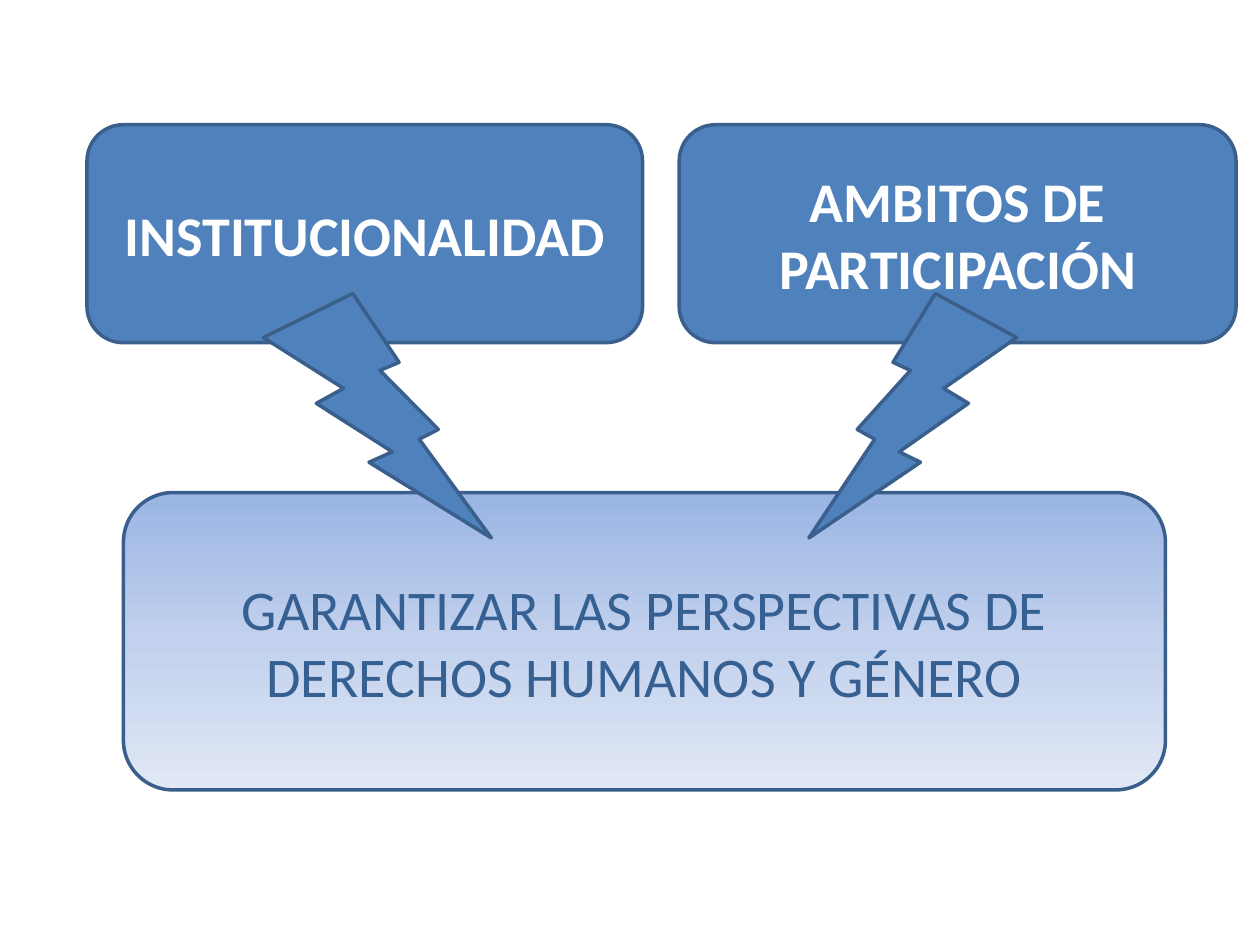
import copy
import dataclasses

import pptx
import pptx.dml.color
import pptx.enum.shapes
import pptx.enum.text
import pptx.oxml.ns
import pptx.util

KIND = pptx.enum.shapes.MSO_SHAPE
BLUE, EDGE, WHITE, NAVY = "4F81BD", "3A5F8C", "FFFFFF", "376092"
FADE = ("9AB5E4", "C2D1ED", "E1E8F5")
COLS, ROWS = 100, 75
WIDE, HIGH = pptx.util.Inches(10), pptx.util.Inches(7.5)


@dataclasses.dataclass
class Area:
    """A place on the grid, in columns and rows."""
    col: float
    row: float
    cols: float
    rows: float


@dataclasses.dataclass
class Box:
    area: Area
    text: str
    fills: tuple[str, ...] = (BLUE,)
    ink: str = WHITE
    bold: bool = True


@dataclasses.dataclass
class Bolt:
    area: Area
    flip: bool = False


BOXES = (
    Box(Area(6.9, 9.9, 44.1, 17.3), "INSTITUCIONALIDAD"),
    Box(Area(53.9, 9.9, 44.2, 17.3), "AMBITOS DE PARTICIPACIÓN"),
    Box(Area(9.8, 39.1, 82.7, 23.6),
        "GARANTIZAR LAS PERSPECTIVAS DE DERECHOS HUMANOS Y GÉNERO",
        FADE, NAVY, False),
)
BOLTS = (
    Bolt(Area(20.9, 23.3, 18.1, 19.4)),
    Bolt(Area(64.2, 23.3, 16.5, 19.4), True),
)


def paint(code: str) -> pptx.dml.color.RGBColor:
    return pptx.dml.color.RGBColor.from_string(code)


def fade(shape, codes: tuple[str, ...]) -> None:
    """Fill from top to bottom with evenly spaced colours."""
    shape.fill.gradient()
    shape.fill.gradient_angle = 270
    stops = shape.element.spPr.find(".//" + pptx.oxml.ns.qn("a:gsLst"))
    while len(stops) < len(codes):
        stops.append(copy.deepcopy(stops[-1]))
    for step, (stop, code) in enumerate(zip(shape.fill.gradient_stops, codes)):
        stop.color.rgb = paint(code)
        stop.position = step / (len(codes) - 1)


def place(slide, kind, area: Area, fills: tuple[str, ...] = (BLUE,)):
    wide, high = WIDE / COLS, HIGH / ROWS
    shape = slide.shapes.add_shape(
        kind, round(area.col * wide), round(area.row * high),
        round(area.cols * wide), round(area.rows * high))
    shape.shadow.inherit = False
    if len(fills) > 1:
        fade(shape, fills)
    else:
        shape.fill.solid()
        shape.fill.fore_color.rgb = paint(fills[0])
    shape.line.color.rgb = paint(EDGE)
    shape.line.width = pptx.util.Pt(2)
    return shape


def draw_box(slide, box: Box) -> None:
    shape = place(slide, KIND.ROUNDED_RECTANGLE, box.area, box.fills)
    frame = shape.text_frame
    frame.word_wrap = True
    frame.vertical_anchor = pptx.enum.text.MSO_ANCHOR.MIDDLE
    para = frame.paragraphs[0]
    para.alignment = pptx.enum.text.PP_ALIGN.CENTER
    run = para.add_run()
    run.text = box.text
    run.font.name = "Calibri"
    run.font.size = pptx.util.Pt(32)
    run.font.bold = box.bold
    run.font.color.rgb = paint(box.ink)


def draw_bolt(slide, bolt: Bolt) -> None:
    shape = place(slide, KIND.LIGHTNING_BOLT, bolt.area)
    if bolt.flip:
        shape.element.spPr.find(pptx.oxml.ns.qn("a:xfrm")).set("flipH", "1")


def main() -> None:
    deck = pptx.Presentation()
    deck.slide_width, deck.slide_height = WIDE, HIGH
    slide = deck.slides.add_slide(deck.slide_layouts[6])
    for box in BOXES:
        draw_box(slide, box)
    for bolt in BOLTS:
        draw_bolt(slide, bolt)
    deck.save("out.pptx")


if __name__ == "__main__":
    main()
